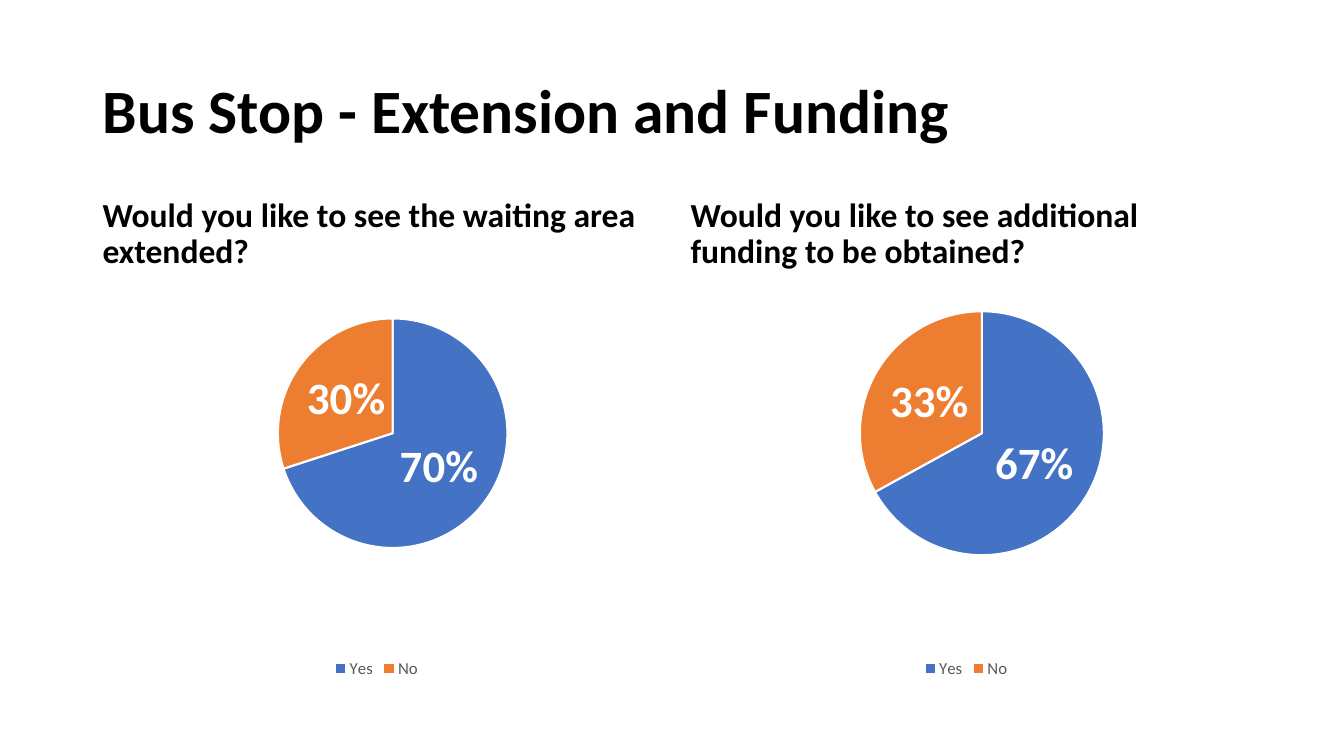
from lxml import etree
from pptx import Presentation
from pptx.chart.data import CategoryChartData
from pptx.dml.color import RGBColor
from pptx.enum.chart import XL_CHART_TYPE, XL_LABEL_POSITION, XL_LEGEND_POSITION
from pptx.enum.text import MSO_ANCHOR, MSO_AUTO_SIZE, PP_ALIGN
from pptx.util import Cm, Pt

PIE = XL_CHART_TYPE.PIE
LABEL_CENTER = XL_LABEL_POSITION.CENTER
LEGEND_BOTTOM = XL_LEGEND_POSITION.BOTTOM
MIDDLE, BOTTOM = MSO_ANCHOR.MIDDLE, MSO_ANCHOR.BOTTOM
LEFT = PP_ALIGN.LEFT
NO_AUTOFIT = MSO_AUTO_SIZE.NONE

TITLE = "Bus Stop - Extension and Funding"
ANSWERS = ("Yes", "No")
QUESTIONS = [
    {
        "text": "Would you like to see the waiting area extended?",
        "values": (70, 30),
        "left": 2.33, "width": 14.33,
        "pie_center": 9.9, "pie_diameter": 5.79,
        "heading_index": 1,
    },
    {
        "text": "Would you like to see additional funding to be obtained?",
        "values": (67, 33),
        "left": 17.15, "width": 14.4,
        "pie_center": 24.75, "pie_diameter": 6.15,
        "heading_index": 3,
    },
]

SLIDE_SIZE = (33.87, 19.05)
TITLE_BOX = (2.33, 1.01, 29.21, 3.68)
HEADING_TOP, HEADING_HEIGHT = 4.67, 2.29
CHART_TOP, CHART_HEIGHT = HEADING_TOP + HEADING_HEIGHT, 10.24
PIE_MIDDLE = 10.92

THEME = {
    "font": "Calibri",
    "text": RGBColor(0x00, 0x00, 0x00),
    "legend": RGBColor(0x59, 0x59, 0x59),
    "white": RGBColor(0xFF, 0xFF, 0xFF),
    "slices": (RGBColor(0x44, 0x72, 0xC4), RGBColor(0xED, 0x7D, 0x31)),
    "title_size": Pt(44),
    "heading_size": Pt(24),
    "chart_size": Pt(10),
    "label_size": Pt(32),
    "legend_size": Pt(12),
    "border": Pt(1.5),
}


def set_values(target, values):
    for name, value in values.items():
        setattr(target, name, value)


def set_font(font, size, color, bold):
    set_values(font, {"name": THEME["font"], "size": size, "bold": bold})
    font.color.rgb = color


def fill_placeholder(shape, text, box, size, anchor, space_before):
    places = map(Cm, box)
    set_values(shape, dict(zip(("left", "top", "width", "height"), places)))
    frame = shape.text_frame
    frame.text = text
    set_values(frame, {"auto_size": NO_AUTOFIT, "word_wrap": True, "vertical_anchor": anchor})
    paragraph = frame.paragraphs[0]
    set_values(paragraph, {"alignment": LEFT, "line_spacing": 0.9, "space_before": space_before})
    set_font(paragraph.runs[0].font, size, THEME["text"], True)


def place_pie(chart, question):
    diameter = question["pie_diameter"]
    pie_left = question["pie_center"] - diameter / 2 - question["left"]
    pie_top = PIE_MIDDLE - diameter / 2 - CHART_TOP
    settings = {
        "layoutTarget": "inner",
        "xMode": "edge",
        "yMode": "edge",
        "x": round(pie_left / question["width"], 3),
        "y": round(pie_top / CHART_HEIGHT, 3),
        "w": round(diameter / question["width"], 3),
        "h": round(diameter / CHART_HEIGHT, 3),
    }
    plot_area = chart.element.find(".//{*}plotArea")
    namespace = etree.QName(plot_area).namespace
    for layout in plot_area.findall("{*}layout"):
        plot_area.remove(layout)
    layout = etree.Element(f"{{{namespace}}}layout")
    manual = etree.SubElement(layout, f"{{{namespace}}}manualLayout")
    for name, value in settings.items():
        etree.SubElement(manual, f"{{{namespace}}}{name}").set("val", str(value))
    plot_area.insert(0, layout)


def add_pie(slide, question):
    data = CategoryChartData()
    data.categories = ANSWERS
    data.add_series("Series 1", question["values"])
    box = (question["left"], CHART_TOP, question["width"], CHART_HEIGHT)
    chart = slide.shapes.add_chart(PIE, *map(Cm, box), data).chart
    set_values(chart, {"has_title": False, "has_legend": True})
    set_font(chart.font, THEME["chart_size"], THEME["text"], False)
    set_values(chart.legend, {"position": LEGEND_BOTTOM, "include_in_layout": False})
    set_font(chart.legend.font, THEME["legend_size"], THEME["legend"], False)

    plot = chart.plots[0]
    set_values(plot, {"vary_by_categories": True, "has_data_labels": True})
    set_values(plot.data_labels, {
        "show_percentage": True,
        "show_value": False,
        "number_format": "0%",
        "number_format_is_linked": False,
        "position": LABEL_CENTER,
    })
    set_font(plot.data_labels.font, THEME["label_size"], THEME["white"], True)
    for index, color in enumerate(THEME["slices"]):
        slice_format = plot.series[0].points[index].format
        slice_format.fill.solid()
        slice_format.fill.fore_color.rgb = color
        slice_format.line.color.rgb = THEME["white"]
        slice_format.line.width = THEME["border"]
    place_pie(chart, question)


def main():
    presentation = Presentation()
    width, height = map(Cm, SLIDE_SIZE)
    set_values(presentation, {"slide_width": width, "slide_height": height})
    layout = presentation.slide_layouts.get_by_name("Comparison")
    slide = presentation.slides.add_slide(layout)
    placeholders = {shape.placeholder_format.idx: shape for shape in slide.placeholders}

    fill_placeholder(slide.shapes.title, TITLE, TITLE_BOX, THEME["title_size"], MIDDLE, Pt(0))
    for question in QUESTIONS:
        heading = placeholders[question["heading_index"]]
        box = (question["left"], HEADING_TOP, question["width"], HEADING_HEIGHT)
        fill_placeholder(heading, question["text"], box, THEME["heading_size"], BOTTOM, Pt(10))
        add_pie(slide, question)

    for shape in placeholders.values():
        if not shape.text_frame.text:
            shape.element.getparent().remove(shape.element)
    presentation.save("out.pptx")


if __name__ == "__main__":
    main()
